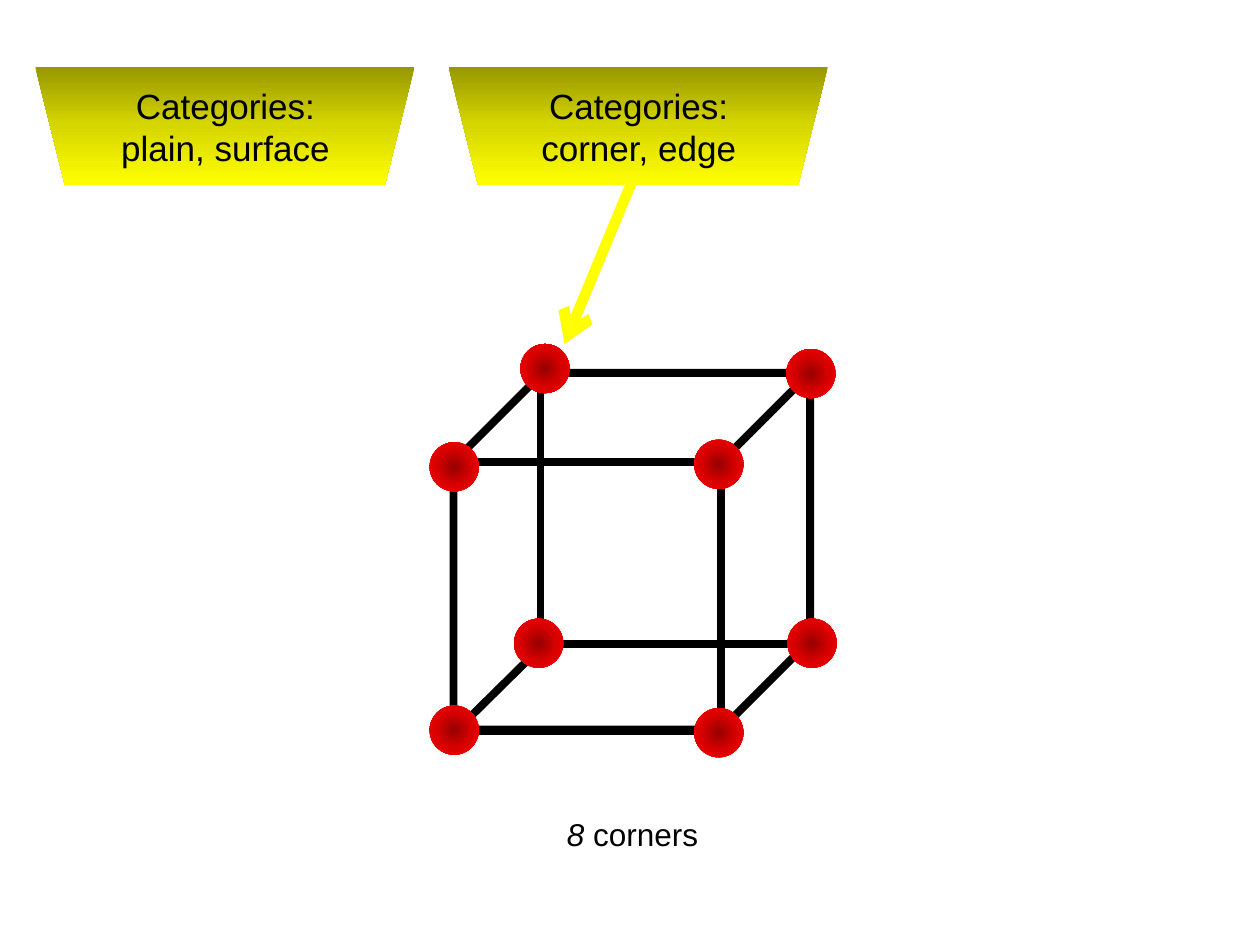
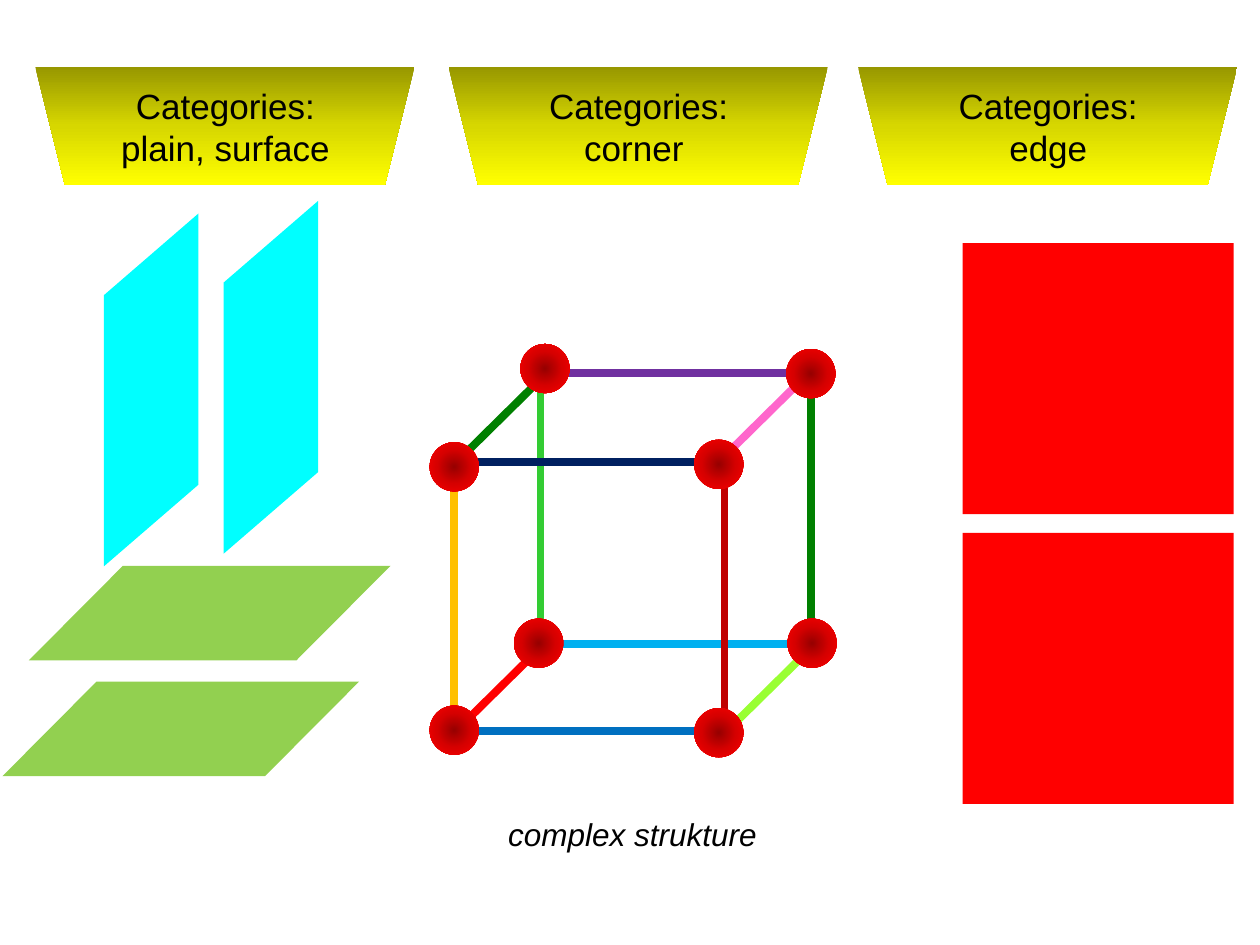
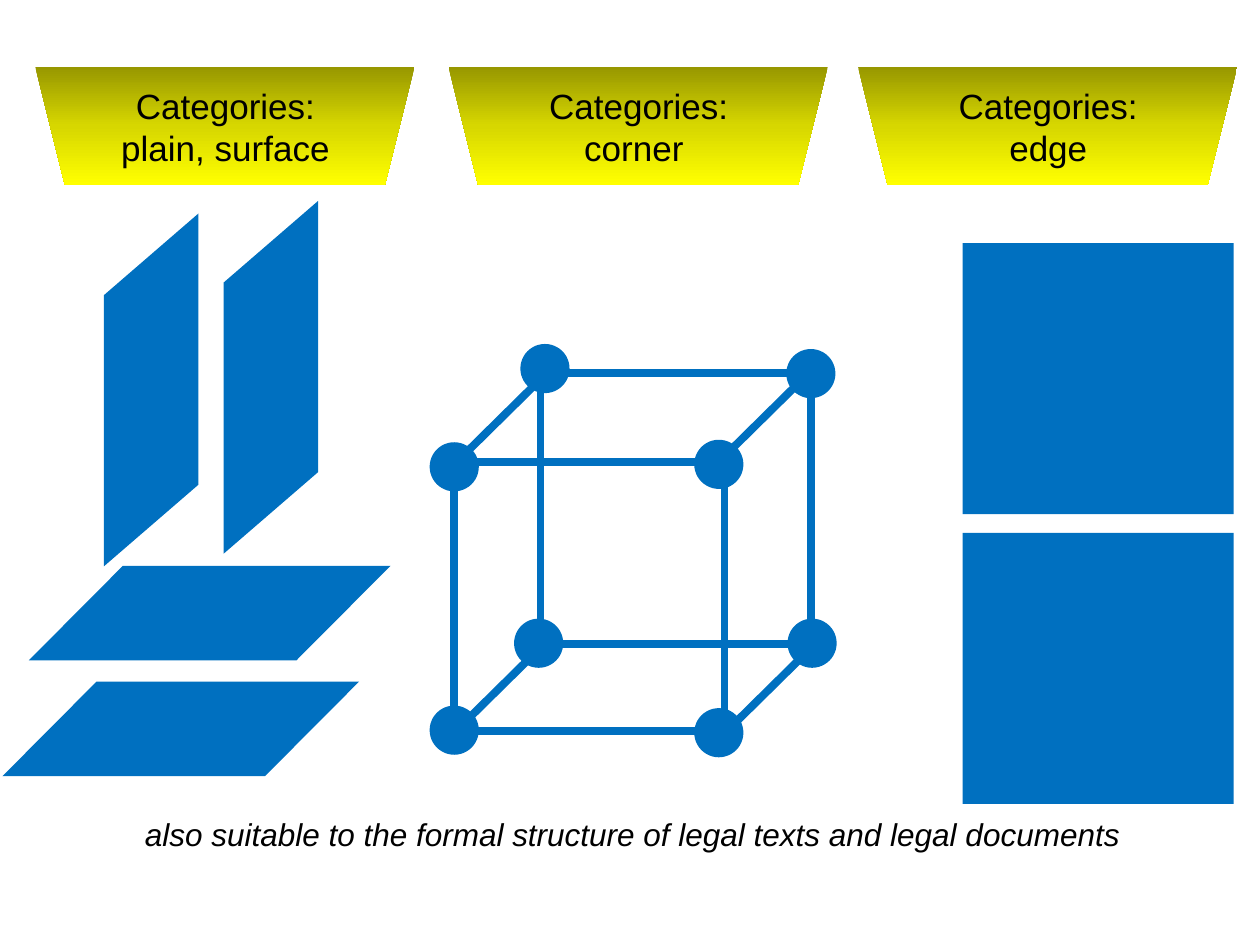
from dataclasses import dataclass
from typing import NamedTuple

from pptx import Presentation
from pptx.dml.color import RGBColor
from pptx.enum.shapes import MSO_CONNECTOR, MSO_SHAPE
from pptx.enum.text import MSO_AUTO_SIZE, PP_ALIGN
from pptx.oxml import parse_xml
from pptx.oxml.ns import nsdecls
from pptx.util import Inches, Pt

LINE = MSO_CONNECTOR.STRAIGHT
BALL = MSO_SHAPE.OVAL
CUBE = MSO_SHAPE.CUBE
SLAB = MSO_SHAPE.PARALLELOGRAM
SQUARE = MSO_SHAPE.RECTANGLE
TRAY = MSO_SHAPE.TRAPEZOID
CENTER = PP_ALIGN.CENTER
GROW = MSO_AUTO_SIZE.SHAPE_TO_FIT_TEXT

# Grid: 100 columns by 75 rows of square cells
WIDTH, HEIGHT = Inches(10), Inches(7.5)
CELL = WIDTH / 100


@dataclass(frozen=True)
class Theme:
    font: str = "Arial"
    ink: str = "000000"
    blue: str = "0070C0"
    arrow: str = "FFFF00"
    cyan: str = "00FFFF"
    green: str = "92D050"
    red: str = "FF0000"
    golds: tuple = ("979700", "D7D700", "FFFF00")
    reds: tuple = ("970000", "D70000", "FF0000")
    head: float = 20
    note: float = 18
    edge: float = 4.5
    bold: float = 6


THEME = Theme()


class Box(NamedTuple):
    x: float
    y: float
    w: float
    h: float


class Edge(NamedTuple):
    x: float
    y: float
    way: tuple
    hue: str


@dataclass(frozen=True)
class Panel:
    kind: int
    box: Box
    hue: str
    lean: float = 0
    turned: bool = False


# Cube: edges start at a point and run one of three ways
ACROSS, DOWN, SLANT = (21.1, 0), (0, 22.1), (7.2, -7.1)
EDGES = [
    Edge(42.9, 29.6, DOWN, "33CC33"),
    Edge(36, 58.2, SLANT, THEME.red),
    Edge(36, 58, ACROSS, THEME.ink),
    Edge(43.3, 51.1, ACROSS, "00B0F0"),
    Edge(36.2, 58, ACROSS, THEME.blue),
    Edge(36, 36.7, ACROSS, "002060"),
    Edge(42.9, 29.6, ACROSS, "7030A0"),
    Edge(36, 35.9, DOWN, "FFC000"),
    Edge(57.5, 36.1, DOWN, "C00000"),
    Edge(64.4, 29.6, DOWN, "008000"),
    Edge(35.6, 37.3, SLANT, "008000"),
    Edge(57, 36.7, SLANT, "FF66CC"),
    Edge(57.2, 58.5, SLANT, "99FF33"),
]
BASE = EDGES[:4]  # edges that complete the preset cube
FRAME = Box(36, 29.6, 28.3, 28.3)
BALLS = [(41.3, 27.3), (34.1, 35.1), (62.4, 27.7), (55.1, 34.9),
         (40.8, 49.1), (62.5, 49.1), (34.1, 56), (55.1, 56.2)]
SIZE = 3.9

# Faces of the cube, laid out beside it
PANELS = [
    Panel(SLAB, Box(7.5, 26.2, 28, 7.5), THEME.cyan, 0.864, True),
    Panel(SLAB, Box(-2, 27.2, 28, 7.5), THEME.cyan, 0.864, True),
    Panel(SLAB, Box(0.2, 54.1, 28.3, 7.5), THEME.green, 0.995),
    Panel(SLAB, Box(2.3, 44.9, 28.7, 7.5), THEME.green, 0.995),
    Panel(SQUARE, Box(76.4, 42.3, 21.5, 21.5), THEME.red),
    Panel(SQUARE, Box(76.4, 19.3, 21.5, 21.5), THEME.red),
]
TRAYS = (2.8, 35.6, 68.1)


def span(cells: float) -> int:
    return round(cells * CELL)


def color(hue: str) -> RGBColor:
    return RGBColor.from_string(hue)


def blend(shape, hues: tuple, course: str) -> None:
    """Fill a shape with three evenly spaced gradient stops."""
    stops = "".join(f'<a:gs pos="{i * 50000}"><a:srgbClr val="{hue}"/></a:gs>'
                    for i, hue in enumerate(hues))
    shape._element.spPr.prstGeom.addnext(parse_xml(
        f'<a:gradFill rotWithShape="1" {nsdecls("a")}>'
        f'<a:gsLst>{stops}</a:gsLst>{course}</a:gradFill>'))


LINEAR = '<a:lin ang="16200000" scaled="1"/>'
RADIAL = ('<a:path path="circle"><a:fillToRect l="50000" t="50000" '
          'r="50000" b="50000"/></a:path>')


def draw(slide, kind: int, box: Box, hue: str = ""):
    shape = slide.shapes.add_shape(kind, *map(span, box))
    shape.shadow.inherit = False
    shape.line.fill.background()
    if hue:
        shape.fill.solid()
        shape.fill.fore_color.rgb = color(hue)
    return shape


def flip(shape) -> None:
    shape._element.spPr.xfrm.set("flipV", "1")


def link(slide, x: float, y: float, way: tuple, hue: str, width: float):
    ends = (x, y, x + way[0], y + way[1])
    line = slide.shapes.add_connector(LINE, *map(span, ends))
    line.line.color.rgb = color(hue)
    line.line.width = Pt(width)
    line._element.spPr.append(parse_xml(f'<a:effectLst {nsdecls("a")}/>'))
    return line


def write(slide, box: Box, lines: list, size: float) -> None:
    """Write centred lines, each a list of (text, italic) runs."""
    frame = slide.shapes.add_textbox(*map(span, box)).text_frame
    frame.word_wrap = True
    frame.auto_size = GROW
    for i, runs in enumerate(lines):
        para = frame.add_paragraph() if i else frame.paragraphs[0]
        para.alignment = CENTER
        para.font.name = THEME.font
        para.font.size = Pt(size)
        para.font.color.rgb = color(THEME.ink)
        for text, italic in runs:
            run = para.add_run()
            run.text = text
            run.font.italic = italic


def note(slide, *runs: tuple) -> None:
    write(slide, Box(0.2, 64.2, 100, 4), [runs], THEME.note)


def heads(slide, *names: str) -> None:
    for x, name in zip(TRAYS, names):
        tray = draw(slide, TRAY, Box(x, 5.3, 30.1, 9.4))
        blend(tray, THEME.golds, LINEAR)
        flip(tray)
        lines = [[("Categories:", False)], [(name, False)]]
        write(slide, Box(x + 3.4, 6.2, 23.4, 7.7), lines, THEME.head)


def edges(slide, items: list, hue: str = "") -> None:
    for item in items:
        link(slide, item.x, item.y, item.way, hue or item.hue, THEME.edge)


def balls(slide, hue: str = "") -> None:
    for x, y in BALLS:
        ball = draw(slide, BALL, Box(x, y, SIZE, SIZE), hue)
        if not hue:
            blend(ball, THEME.reds, RADIAL)


def panels(slide, hue: str = "") -> None:
    for item in PANELS:
        shape = draw(slide, item.kind, item.box, hue or item.hue)
        if item.lean:
            shape.adjustments[0] = item.lean
        if item.turned:
            shape.rotation = 270
            flip(shape)


def corners(slide) -> None:
    note(slide, ("8 ", True), ("corners", False))
    cube = draw(slide, CUBE, FRAME)
    cube.fill.background()
    cube.line.color.rgb = color(THEME.ink)
    cube.line.width = Pt(THEME.edge)
    edges(slide, BASE, THEME.ink)
    arrow = link(slide, 50.7, 13.1, (-5.9, 14.2), THEME.arrow, THEME.bold)
    arrow.line._get_or_add_ln().append(
        parse_xml(f'<a:tailEnd type="arrow" {nsdecls("a")}/>'))
    balls(slide)
    heads(slide, "plain, surface", "corner, edge")


def parts(slide, text: str, hue: str = "") -> None:
    """Show the cube with its faces, in many colours or in one."""
    note(slide, (text, True))
    edges(slide, EDGES, hue)
    balls(slide, hue)
    panels(slide, hue)
    heads(slide, "plain, surface", "corner ", "edge")


def main() -> None:
    deck = Presentation()
    deck.slide_width, deck.slide_height = WIDTH, HEIGHT
    blank = deck.slide_layouts[6]
    corners(deck.slides.add_slide(blank))
    parts(deck.slides.add_slide(blank), "complex strukture")
    parts(deck.slides.add_slide(blank),
          "also suitable to the formal structure of legal texts "
          "and legal documents", THEME.blue)
    deck.save("out.pptx")


if __name__ == "__main__":
    main()
